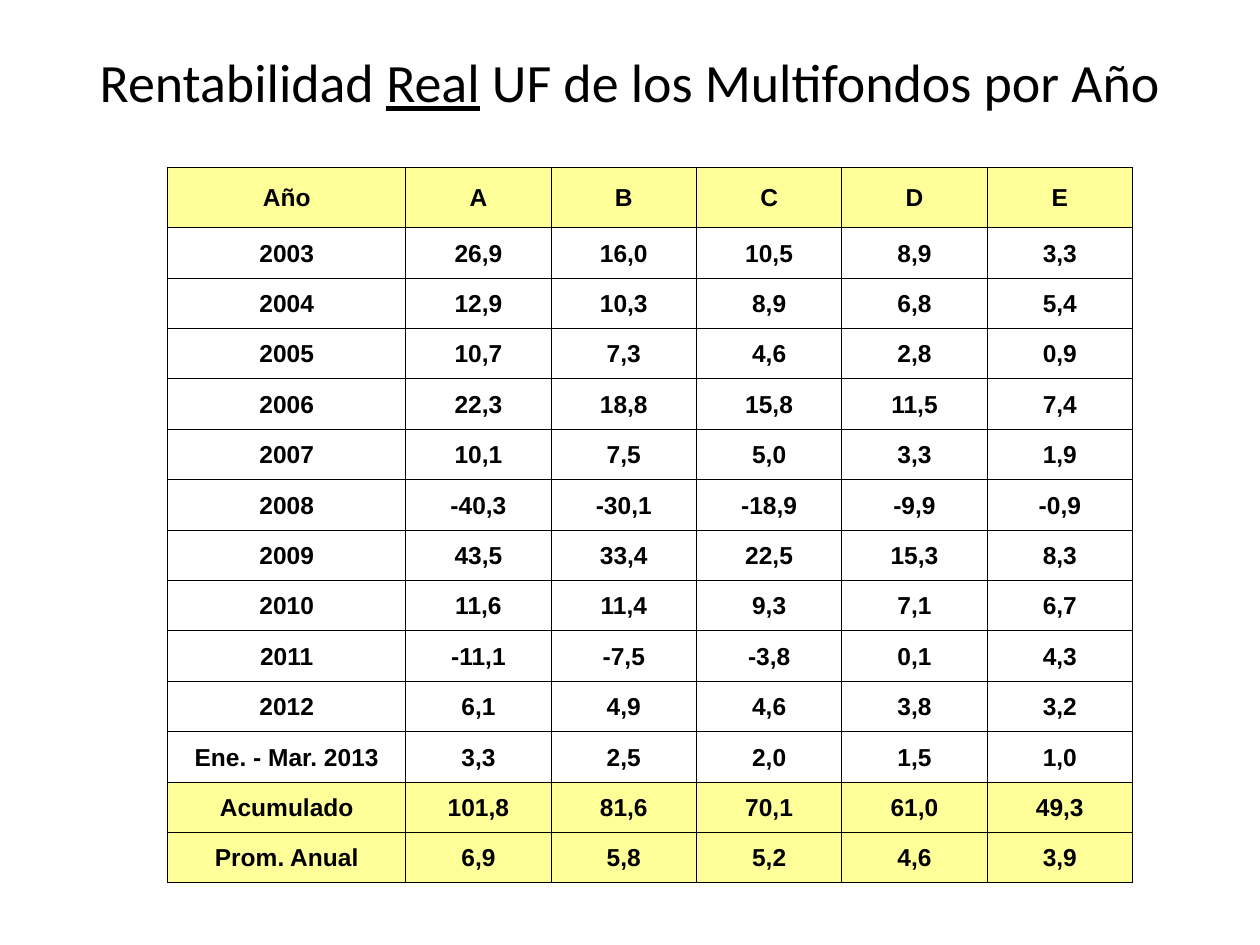
from lxml.etree import SubElement
from pptx import Presentation
from pptx.dml.color import RGBColor
from pptx.enum.text import MSO_ANCHOR as Anchor, MSO_AUTO_SIZE as AutoSize, PP_ALIGN as Align
from pptx.oxml.ns import qn
from pptx.util import Cm, Pt

BLACK = RGBColor(0x00, 0x00, 0x00)
YELLOW = RGBColor(0xFF, 0xFF, 0x99)

RETURNS = [
    ("Año", "A", "B", "C", "D", "E"),
    ("2003", "26,9", "16,0", "10,5", "8,9", "3,3"),
    ("2004", "12,9", "10,3", "8,9", "6,8", "5,4"),
    ("2005", "10,7", "7,3", "4,6", "2,8", "0,9"),
    ("2006", "22,3", "18,8", "15,8", "11,5", "7,4"),
    ("2007", "10,1", "7,5", "5,0", "3,3", "1,9"),
    ("2008", "-40,3", "-30,1", "-18,9", "-9,9", "-0,9"),
    ("2009", "43,5", "33,4", "22,5", "15,3", "8,3"),
    ("2010", "11,6", "11,4", "9,3", "7,1", "6,7"),
    ("2011", "-11,1", "-7,5", "-3,8", "0,1", "4,3"),
    ("2012", "6,1", "4,9", "4,6", "3,8", "3,2"),
    ("Ene. - Mar. 2013", "3,3", "2,5", "2,0", "1,5", "1,0"),
    ("Acumulado", "101,8", "81,6", "70,1", "61,0", "49,3"),
    ("Prom. Anual", "6,9", "5,8", "5,2", "4,6", "3,9"),
]
HIGHLIGHTED = ("Año", "Acumulado", "Prom. Anual")


def add_run(paragraph, text, font, size, bold=False, underline=False):
    run = paragraph.add_run()
    run.text = text
    run.font.name = font
    run.font.size = Pt(size)
    run.font.bold = bold
    run.font.underline = underline
    run.font.color.rgb = BLACK


def add_borders(cell):
    properties = cell._tc.get_or_add_tcPr()
    for side in ("a:lnL", "a:lnR", "a:lnT", "a:lnB"):
        line = SubElement(properties, qn(side), w=str(Pt(0.5)))
        color = SubElement(line, qn("a:solidFill"))
        SubElement(color, qn("a:srgbClr"), val=str(BLACK))


prs = Presentation()
prs.slide_width, prs.slide_height = Cm(25.4), Cm(19.05)
slide = prs.slides.add_slide(prs.slide_layouts[5])

# Title
title = slide.shapes.title
title.left, title.top, title.width, title.height = Cm(1.27), Cm(0.76), Cm(22.86), Cm(2)
title.text_frame.auto_size = AutoSize.NONE
title.text_frame.vertical_anchor = Anchor.MIDDLE
heading = title.text_frame.paragraphs[0]
heading.alignment = Align.CENTER
heading.line_spacing = 0.8
add_run(heading, "Rentabilidad ", "Calibri", 30.8)
add_run(heading, "Real", "Calibri", 30.8, underline=True)
add_run(heading, " UF de los Multifondos por Año", "Calibri", 30.8)

# Table grid: wider year column, taller header, equal cells elsewhere
width, height = Cm(19.45), Cm(14.43)
year_width, header_height = Cm(4.8), Cm(1.21)
fund_count, body_count = len(RETURNS[0]) - 1, len(RETURNS) - 1
returns = slide.shapes.add_table(
    len(RETURNS), len(RETURNS[0]), Cm(3.38), Cm(3.38), width, height).table
for index, column in enumerate(returns.columns):
    column.width = (width - year_width) // fund_count if index else year_width
for index, row in enumerate(returns.rows):
    row.height = (height - header_height) // body_count if index else header_height

# Table cells
for row, values in zip(returns.rows, RETURNS):
    for cell, value in zip(row.cells, values):
        cell.margin_left = cell.margin_right = cell.margin_top = Cm(0.03)
        cell.margin_bottom = Cm(0)
        cell.vertical_anchor = Anchor.MIDDLE
        add_borders(cell)
        if values[0] in HIGHLIGHTED:
            cell.fill.solid()
            cell.fill.fore_color.rgb = YELLOW
        else:
            cell.fill.background()
        paragraph = cell.text_frame.paragraphs[0]
        paragraph.alignment = Align.CENTER
        add_run(paragraph, value, "Arial", 14, bold=True)

prs.save("out.pptx")
